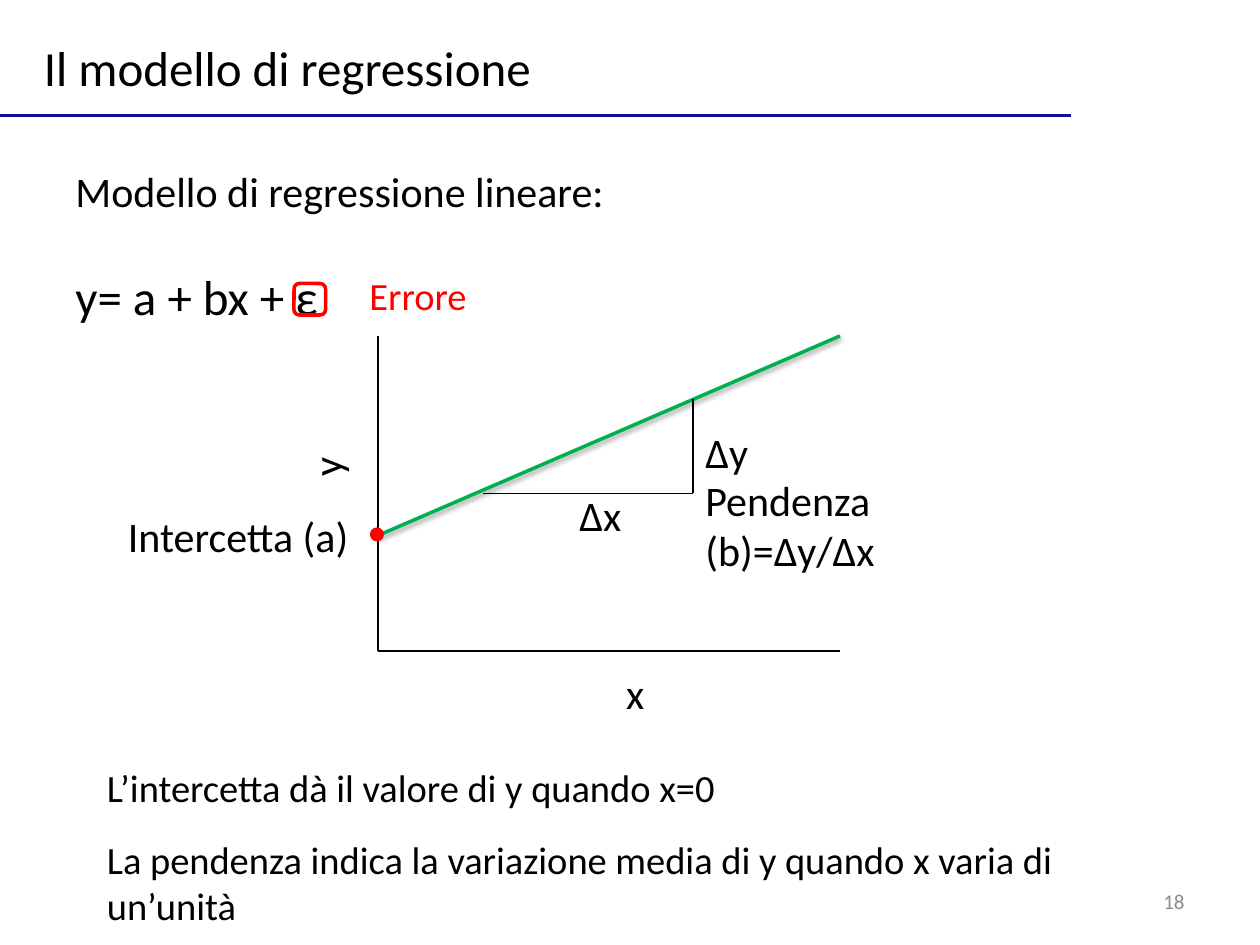
from lxml import etree
from pptx import Presentation
from pptx.dml.color import RGBColor
from pptx.enum.shapes import MSO_CONNECTOR, MSO_SHAPE
from pptx.enum.text import MSO_ANCHOR, PP_ALIGN
from pptx.oxml.ns import qn
from pptx.util import Pt

PX = 7620
BLACK = RGBColor(0x00, 0x00, 0x00)
GREY = RGBColor(0x8C, 0x8C, 0x8C)
NAVY = RGBColor(0x0C, 0x12, 0x90)
GREEN = RGBColor(0x00, 0xB0, 0x50)
RED = RGBColor(0xFF, 0x00, 0x00)
LEFT, CENTER, RIGHT = PP_ALIGN.LEFT, PP_ALIGN.CENTER, PP_ALIGN.RIGHT

prs = Presentation()
prs.slide_width = 1200 * PX
prs.slide_height = 900 * PX
slide = prs.slides.add_slide(prs.slide_layouts[6])
shapes = slide.shapes


def add_label(box, lines, color=BLACK, align=LEFT, wrap=True, gap=0):
    label = shapes.add_textbox(*(side * PX for side in box))
    frame = label.text_frame
    frame.word_wrap = wrap
    frame.vertical_anchor = MSO_ANCHOR.MIDDLE
    for index, (words, size) in enumerate(lines):
        paragraph = frame.add_paragraph() if index else frame.paragraphs[0]
        paragraph.alignment = align
        if index:
            paragraph.space_before = Pt(gap)
        run = paragraph.add_run()
        run.text = words
        run.font.name = "Calibri"
        run.font.size = Pt(size)
        run.font.color.rgb = color
    return label


def add_line(ends, color=BLACK, width=0.75):
    line = shapes.add_connector(MSO_CONNECTOR.STRAIGHT, *(end * PX for end in ends))
    line.line.color.rgb = color
    line.line.width = Pt(width)
    return etree.SubElement(line._element.spPr, qn("a:effectLst"))


add_label((860, 834, 280, 48), [("18", 12)], GREY, RIGHT)
add_label((30, 30, 492, 68), [("Il modello di regressione", 28)], wrap=False)
add_line((0, 110, 1020, 110), NAVY, 2)
add_label((60, 151, 1050, 166),
          [("Modello di regressione lineare:", 24), ("y= a + bx + ε", 28)], gap=29)

for axis in [(360, 320, 360, 620), (800, 620, 360, 620)]:
    add_line(axis)

regression_effects = add_line((800, 320, 360, 510), GREEN, 2)
shadow = etree.SubElement(regression_effects, qn("a:outerShdw"), blurRad=str(Pt(3.1)),
                          dist=str(Pt(1.6)), dir="5400000", rotWithShape="0")
shadow_color = etree.SubElement(shadow, qn("a:srgbClr"), val="000000")
etree.SubElement(shadow_color, qn("a:alpha"), val="38000")

for slope_side in [(660, 470, 460, 470), (660, 470, 660, 380)]:
    add_line(slope_side)

add_label((450, 630, 310, 60), [("x", 24)], align=CENTER)
add_label((235, 415, 150, 60), [("y", 24)], align=CENTER).rotation = 270
add_label((110, 480, 250, 60), [("Intercetta (a)", 24)])

intercept = shapes.add_shape(MSO_SHAPE.OVAL, 354 * PX, 504 * PX, 10 * PX, 10 * PX)
intercept.fill.solid()
intercept.fill.fore_color.rgb = RED

for box, words, size in [
    ((660, 470, 340, 60), "Pendenza (b)=Δy/Δx", 24),
    ((540, 460, 70, 60), "Δx", 24),
    ((660, 400, 70, 60), "Δy", 24),
    ((90, 722, 840, 56), "L’intercetta dà il valore di y quando x=0", 22),
    ((90, 790, 1050, 101),
     "La pendenza indica la variazione media di y quando x varia di un’unità", 22),
]:
    add_label(box, [(words, size)])

error_frame = shapes.add_shape(MSO_SHAPE.ROUNDED_RECTANGLE,
                               280 * PX, 270 * PX, 30 * PX, 30 * PX)
error_frame.fill.background()
for mark in (intercept, error_frame):
    mark.shadow.inherit = False
    mark.line.color.rgb = RED
    mark.line.width = Pt(2)

add_label((340, 253, 160, 56), [("Errore", 22)], RED)

prs.save("out.pptx")
